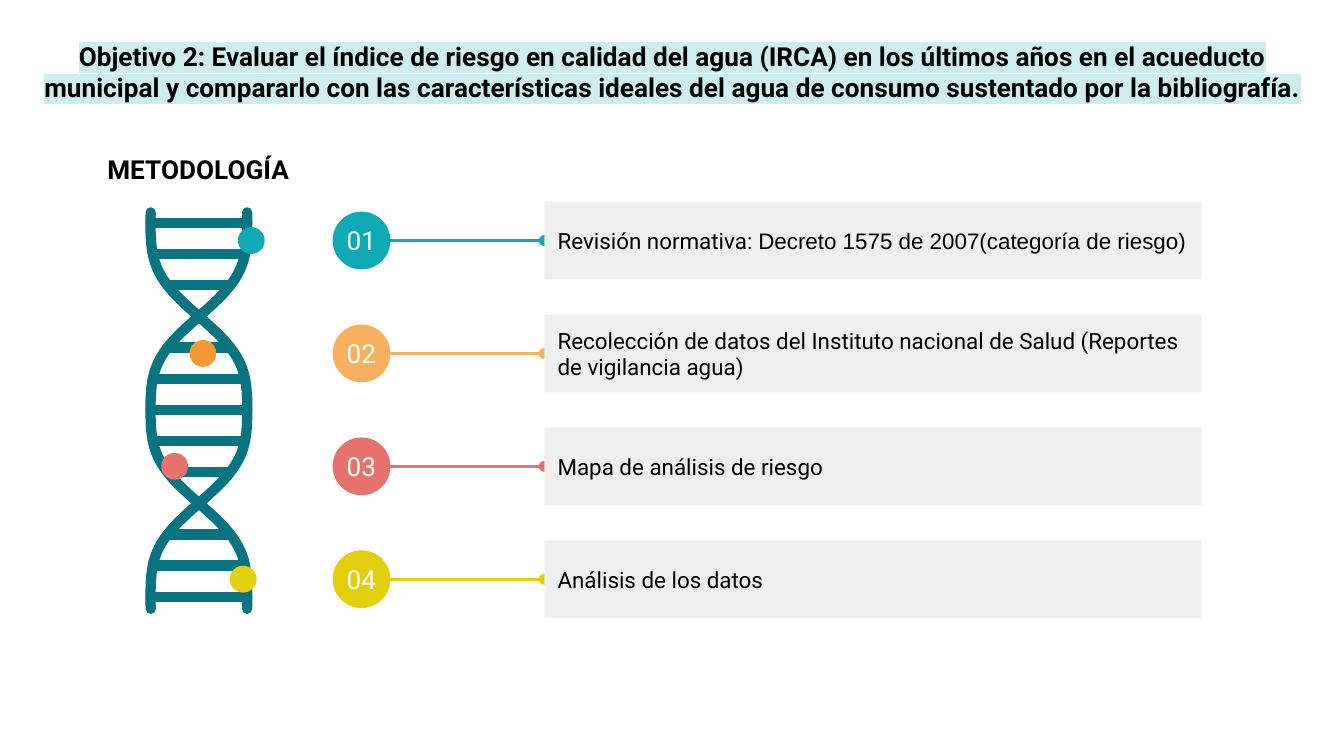
import math
from dataclasses import dataclass

import pptx
import pptx.dml.color
import pptx.enum.shapes
import pptx.enum.text
import pptx.oxml
import pptx.oxml.ns
import pptx.util
from pptx.util import Inches


@dataclass(frozen=True)
class Theme:
    font: str = "Roboto"
    second_font: str = "Arial"
    heading_size: int = 14
    body_size: int = 12
    black: str = "000000"
    white: str = "FFFFFF"
    panel: str = "EFEFEF"
    highlight: str = "CDEDEF"
    helix: str = "087381"
    teal: str = "0EAAB5"
    orange: str = "F7AF60"
    deep_orange: str = "F49A34"
    coral: str = "E7716B"
    yellow: str = "E4CF0E"


THEME = Theme()
FIRST_ROW, ROW_PITCH = 1.79, 0.84
PANEL_LEFT, PANEL_WIDTH, PANEL_HEIGHT = 4.05, 4.89, 0.58
BADGE_CENTER, BADGE_SIZE, DOT_SIZE = 2.69, 0.43, 0.2
HELIX_CENTER, HELIX_RADIUS, HELIX_MIDDLE = 1.48, 0.36, 3.05
HELIX_TOP, HELIX_BOTTOM, HELIX_LOBE = 1.58, 4.53, 1.39

TITLE = (
    "Objetivo 2: Evaluar el índice de riesgo en calidad del agua (IRCA) "
    "en los últimos años en el acueducto municipal y compararlo con las "
    "características ideales del agua de consumo sustentado por la bibliografía."
)
STEPS = [
    (THEME.teal, THEME.teal, 1.87,
     [("Revisión normativa: ", THEME.font),
      ("Decreto 1575 de 2007(categoría de riesgo)", THEME.second_font)]),
    (THEME.orange, THEME.deep_orange, 1.51,
     [("Recolección de datos del Instituto nacional de Salud "
       "(Reportes de vigilancia agua)", THEME.font)]),
    (THEME.coral, THEME.coral, 1.3,
     [("Mapa de análisis de riesgo", THEME.font)]),
    (THEME.yellow, THEME.yellow, 1.81,
     [("Análisis de los datos", THEME.font)]),
]


def rgb(color):
    return pptx.dml.color.RGBColor.from_string(color)


def set_attributes(target, values):
    for name, value in values.items():
        setattr(target, name, value)


def append_xml(parent, tag, attributes=""):
    namespace = pptx.oxml.ns.nsdecls("a")
    element = pptx.oxml.parse_xml(f"<a:{tag} {namespace} {attributes}/>")
    parent.append(element)
    return element


def write_text(shape, runs, size, color, align, anchor, bold=False):
    frame = shape.text_frame
    set_attributes(frame, {
        "word_wrap": True, "vertical_anchor": anchor,
        "margin_left": Inches(0.1), "margin_right": Inches(0.1),
        "margin_top": Inches(0.1), "margin_bottom": Inches(0.1),
    })
    paragraph = frame.paragraphs[0]
    paragraph.alignment = align
    for text, font in runs:
        run = paragraph.add_run()
        run.text = text
        set_attributes(run.font, {
            "name": font, "size": pptx.util.Pt(size), "bold": bold,
        })
        run.font.color.rgb = rgb(color)
    return paragraph


def add_filled_shape(slide, kind, center_x, center_y, width, height, color):
    shape = slide.shapes.add_shape(
        kind, Inches(center_x - width / 2), Inches(center_y - height / 2),
        Inches(width), Inches(height))
    shape.shadow.inherit = False
    shape.fill.solid()
    shape.fill.fore_color.rgb = rgb(color)
    shape.line.fill.background()
    return shape


def add_circle(slide, center_x, center_y, size, color):
    return add_filled_shape(slide, pptx.enum.shapes.MSO_SHAPE.OVAL,
                            center_x, center_y, size, size, color)


def add_heading(slide, text, left, top, width, height):
    box = slide.shapes.add_textbox(
        Inches(left), Inches(top), Inches(width), Inches(height))
    return write_text(
        box, [(text, THEME.font)], THEME.heading_size, THEME.black,
        pptx.enum.text.PP_ALIGN.CENTER, pptx.enum.text.MSO_ANCHOR.TOP, True)


def highlight_text(paragraph, color):
    for run in paragraph.runs:
        properties = run.font._element
        highlight = append_xml(properties, "highlight")
        append_xml(highlight, "srgbClr", f'val="{color}"')
        fill = properties.find(pptx.oxml.ns.qn("a:solidFill"))
        fill.addnext(highlight)


def helix_point(side, y):
    angle = math.pi * (y - HELIX_MIDDLE) / HELIX_LOBE
    wave = 1.1 * math.cos(angle) - 0.1 * math.cos(3 * angle)
    return Inches(HELIX_CENTER + side * HELIX_RADIUS * wave), Inches(y)


def add_helix(slide):
    samples = 96
    heights = [HELIX_TOP + (HELIX_BOTTOM - HELIX_TOP) * index / samples
               for index in range(samples + 1)]
    contours = [[helix_point(side, y) for y in heights] for side in (-1, 1)]
    for index in range(-6, 7):
        if abs(index) != 3:
            y = HELIX_MIDDLE + index * HELIX_LOBE / 6
            contours.append([helix_point(side, y) for side in (-1, 1)])
    builder = slide.shapes.build_freeform(*contours[0][0])
    for index, contour in enumerate(contours):
        if index:
            builder.move_to(*contour[0])
        builder.add_line_segments(contour[1:], close=False)
    helix = builder.convert_to_shape()
    helix.shadow.inherit = False
    helix.fill.background()
    helix.line.color.rgb = rgb(THEME.helix)
    helix.line.width = pptx.util.Pt(5.5)
    helix.line._ln.set("cap", "rnd")
    append_xml(helix.line._ln, "round")


def add_link(slide, panel, y, color):
    link = slide.shapes.add_connector(
        pptx.enum.shapes.MSO_CONNECTOR.STRAIGHT,
        Inches(2.65), Inches(y), Inches(PANEL_LEFT), Inches(y))
    link.end_connect(panel, 1)
    link.line.color.rgb = rgb(color)
    link.line.width = pptx.util.Pt(1.5)
    append_xml(link.line._ln, "tailEnd", 'type="oval"')
    append_xml(link._element.spPr, "effectLst")
    panel._element.addprevious(link._element)


def add_step(slide, number, y, color, runs):
    middle = pptx.enum.text.MSO_ANCHOR.MIDDLE
    panel = add_filled_shape(
        slide, pptx.enum.shapes.MSO_SHAPE.RECTANGLE,
        PANEL_LEFT + PANEL_WIDTH / 2, y, PANEL_WIDTH, PANEL_HEIGHT, THEME.panel)
    write_text(panel, runs, THEME.body_size, THEME.black,
               pptx.enum.text.PP_ALIGN.LEFT, middle)
    add_link(slide, panel, y, color)
    badge = add_circle(slide, BADGE_CENTER, y, BADGE_SIZE, color)
    write_text(badge, [(f"{number:02d}", THEME.font)], THEME.heading_size,
               THEME.white, pptx.enum.text.PP_ALIGN.CENTER, middle)
    badge.text_frame.word_wrap = False


def main():
    presentation = pptx.Presentation()
    set_attributes(presentation, {
        "slide_width": Inches(10), "slide_height": Inches(10) * 9 // 16,
    })
    slide = presentation.slides.add_slide(presentation.slide_layouts[6])
    add_helix(slide)
    for index, (color, dot_color, dot_center, runs) in enumerate(STEPS):
        y = FIRST_ROW + index * ROW_PITCH
        add_step(slide, index + 1, y, color, runs)
        add_circle(slide, dot_center, y, DOT_SIZE, dot_color)
    title = add_heading(slide, TITLE, 0.2, 0.2, 9.61, 0.79)
    highlight_text(title, THEME.highlight)
    add_heading(slide, "METODOLOGÍA", 0.42, 1.04, 2.11, 0.44)
    presentation.save("out.pptx")


if __name__ == "__main__":
    main()
